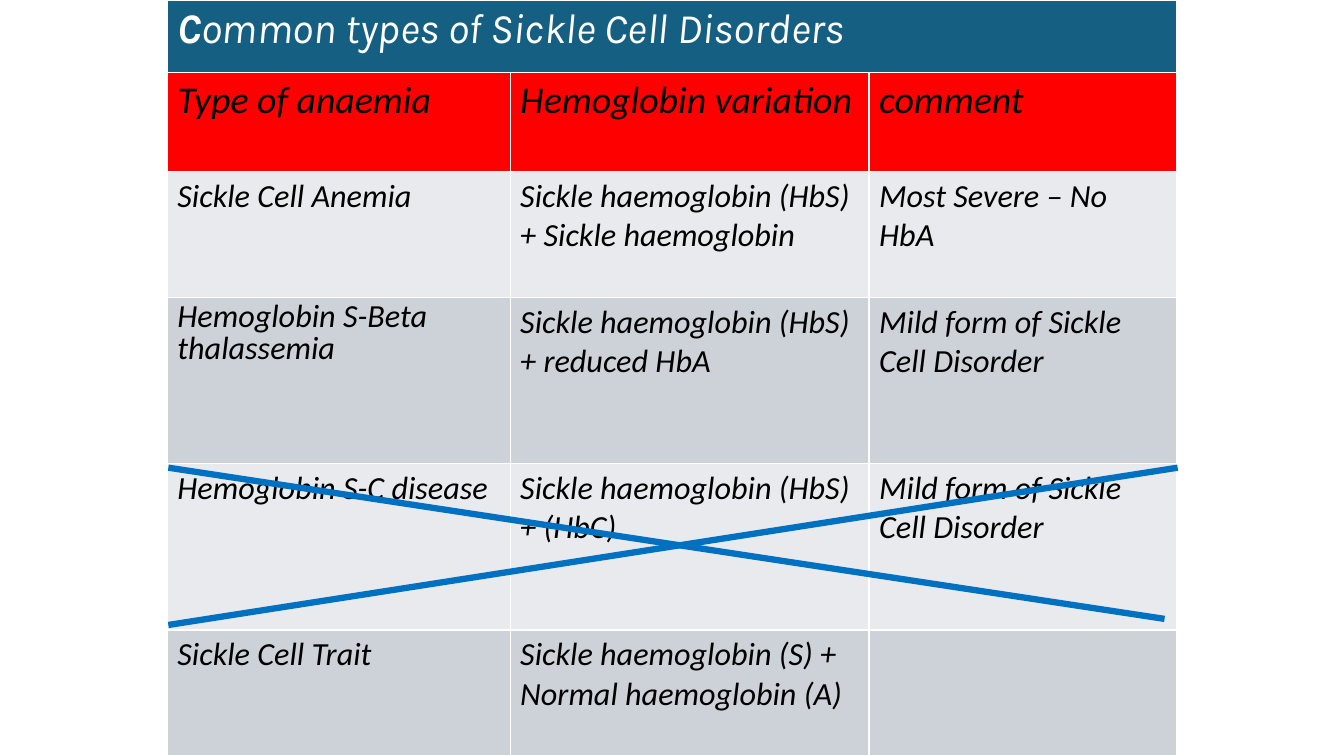
from pptx import Presentation
from pptx.dml.color import RGBColor
from pptx.enum.shapes import MSO_CONNECTOR
from pptx.oxml.ns import qn
from pptx.util import Inches, Pt
from lxml import etree

COLORS = {"title": "156082", "header": "FF0000", "light": "E8EAED", "dark": "CCD2D8",
          "white": "FFFFFF", "black": "000000", "cross": "0070C0"}


def rgb(name):
    return RGBColor.from_string(COLORS[name])


def add_text(p, text, size, color, font="Calibri", bold=False):
    r = p.add_run()
    r.text = text
    r.font.name = font
    r.font.size = Pt(size)
    r.font.bold = bold
    r.font.italic = True
    r.font.color.rgb = rgb(color)


prs = Presentation()
prs.slide_width, prs.slide_height = Inches(13.33), Inches(7.5)
s = prs.slides.add_slide(prs.slide_layouts[6])

col_widths = [3.4, 3.56, 3.05]
row_heights = [0.72, 0.98, 1.25, 1.65, 1.65, 1.25]
rows = [
    ["Type of anaemia", "Hemoglobin variation", "comment"],
    ["Sickle Cell Anemia", "Sickle haemoglobin (HbS) + Sickle haemoglobin", "Most Severe – No HbA"],
    ["Hemoglobin S-Beta thalassemia", "Sickle haemoglobin (HbS) + reduced HbA",
     "Mild form of Sickle Cell Disorder"],
    ["Hemoglobin S-C disease", "Sickle haemoglobin (HbS) + (HbC)", "Mild form of Sickle Cell Disorder"],
    ["Sickle Cell Trait", "Sickle haemoglobin (S) + Normal haemoglobin (A)", ""],
]

table = s.shapes.add_table(len(row_heights), len(col_widths), Inches(1.66), Inches(0),
                           Inches(sum(col_widths)), Inches(sum(row_heights))).table
for column, width in zip(table.columns, col_widths):
    column.width = Inches(width)
for row, height in zip(table.rows, row_heights):
    row.height = Inches(height)

title = table.cell(0, 0)
title.merge(table.cell(0, 2))
title.fill.solid()
title.fill.fore_color.rgb = rgb("title")
p = title.text_frame.paragraphs[0]
add_text(p, "C", 30, "white", "Karla", bold=True)
add_text(p, "ommon types of Sickle Cell Disorders", 30, "white", "Karla")

row_fills = ["header", "light", "dark", "light", "dark"]
for i, (texts, fill) in enumerate(zip(rows, row_fills), start=1):
    for j, text in enumerate(texts):
        cell = table.cell(i, j)
        cell.fill.solid()
        cell.fill.fore_color.rgb = rgb(fill)
        if text:
            add_text(cell.text_frame.paragraphs[0], text, 27 if i == 1 else 23, "black")
table.cell(3, 0).text_frame.paragraphs[0].line_spacing = 0.8

for x1, y1, x2, y2 in [(1.67, 4.64, 11.55, 6.14), (1.67, 6.2, 11.68, 4.64)]:
    line = s.shapes.add_connector(MSO_CONNECTOR.STRAIGHT, Inches(x1), Inches(y1), Inches(x2), Inches(y2))
    line.line.color.rgb = rgb("cross")
    line.line.width = Pt(4.5)
    etree.SubElement(line._element.spPr, qn("a:effectLst"))

prs.save("out.pptx")
